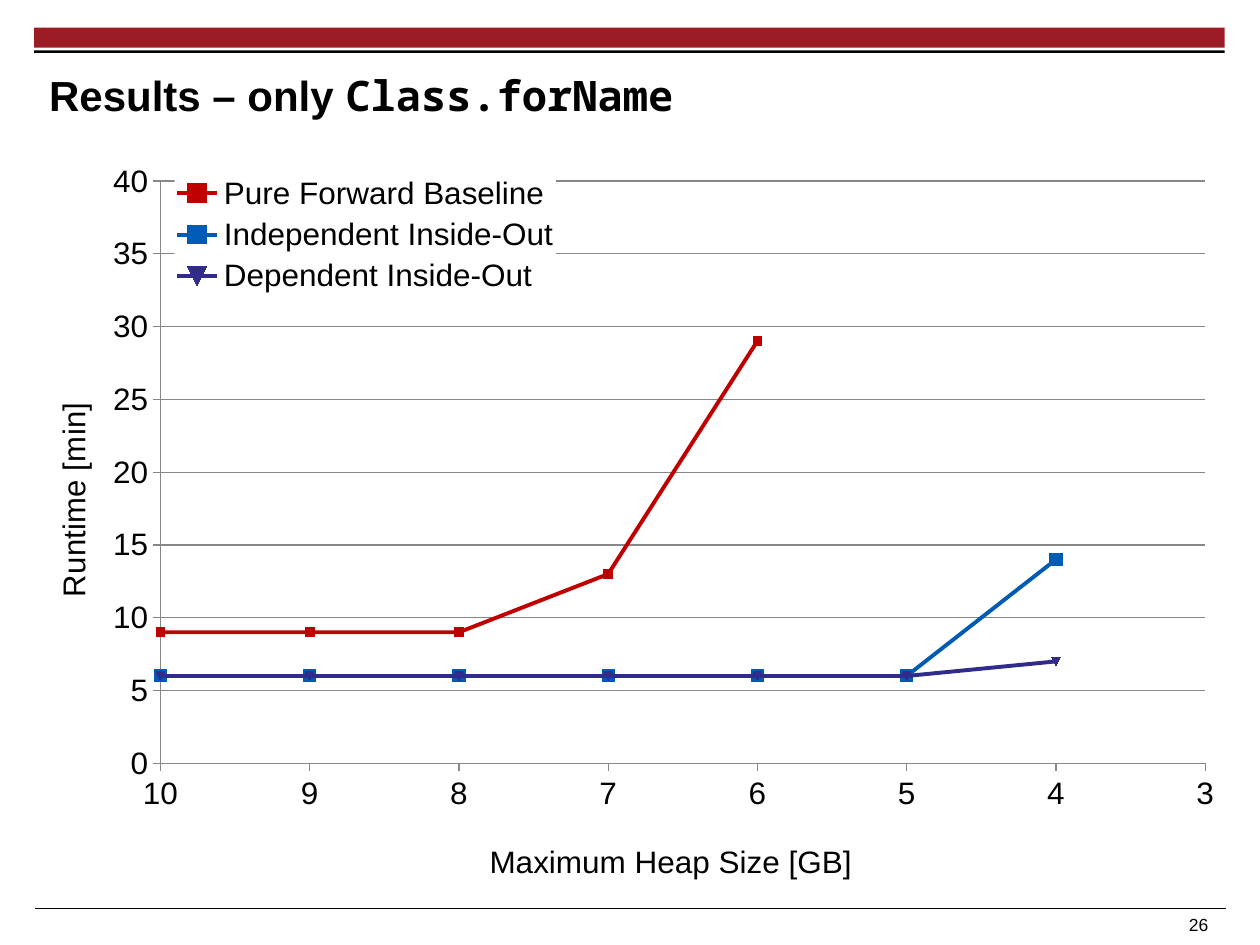
"""Build a results slide with a runtime-by-heap-size line chart."""
from dataclasses import dataclass

from lxml.etree import SubElement
from pptx import Presentation
from pptx.chart.data import CategoryChartData
from pptx.dml.color import RGBColor
from pptx.enum.chart import XL_CHART_TYPE as ChartType
from pptx.enum.chart import XL_LEGEND_POSITION as LegendPosition
from pptx.enum.chart import XL_MARKER_STYLE as Marker
from pptx.enum.chart import XL_TICK_MARK as TickMark
from pptx.enum.shapes import MSO_CONNECTOR as Connector
from pptx.enum.shapes import MSO_SHAPE as Shape
from pptx.enum.text import MSO_ANCHOR as Anchor
from pptx.enum.text import PP_ALIGN as Align
from pptx.oxml.ns import qn
from pptx.oxml.xmlchemy import OxmlElement
from pptx.util import Inches, Pt


@dataclass(frozen=True)
class Theme:
    font: str = "Arial"
    mono: str = "Noto Sans Mono"
    title_size: int = 24
    chart_size: int = 18
    number_size: int = 10
    series_width: float = 2.25
    rule_width: float = 0.6
    ink: str = "000000"
    paper: str = "FFFFFF"
    band: str = "9C1C26"
    grid: str = "878787"


THEME = Theme()
WIDTH, HEIGHT = Inches(10), Inches(7.5)

TITLE = [("Results – only ", THEME.font), ("Class.forName", THEME.mono)]
PAGE_NUMBER = "26"
HEAP_SIZES = ["10", "9", "8", "7", "6", "5", "4", "3"]
AXIS_TITLES = {"category": "Maximum Heap Size [GB]", "value": "Runtime [min]"}
SERIES = [
    ("Pure Forward Baseline", [9, 9, 9, 13, 29, None, None, None], "C00000", Marker.SQUARE, 5),
    ("Independent Inside-Out", [6, 6, 6, 6, 6, 6, 14, None], "005BB4", Marker.SQUARE, 7),
    ("Dependent Inside-Out", [6, 6, 6, 6, 6, 6, 7, None], "312C8C", Marker.AUTOMATIC, 5),
]

BARS = [((2.7, 2.93, 94.5, 2.13), THEME.band), ((2.7, 5.33, 94.5, 0.27), THEME.ink)]
FOOTER_RULE = (2.8, 96.13, 94.5, 0)
NUMBER_BOX = (18.5, 96.13, 78.8, 3.33)
TITLE_BOX = (3.9, 5.87, 93.3, 8.4)
CHART_BOX = (2.8, 16.4, 93.7, 77.73)
PLOT_SHARE = {"x": 0.106, "y": 0.036, "w": 0.885, "h": 0.804}
LEGEND_SHARE = {"x": 0.118, "y": 0.02, "w": 0.323, "h": 0.18}
CATEGORY_TITLE_SHARE = {"x": 0.38, "y": 0.94}
VALUE_TITLE_SHARE = {"x": 0.01, "y": 0.338}


def place(box):
    """Turn percentages of the slide into lengths."""
    return [int(share * side / 100) for share, side in zip(box, (WIDTH, HEIGHT) * 2)]


def color(value):
    return RGBColor.from_string(value)


def set_font(font, size, name=THEME.font, bold=False):
    font.name, font.size, font.bold = name, Pt(size), bold
    font.color.rgb = color(THEME.ink)


def set_line(line, value, width):
    line.color.rgb = color(value)
    line.width = Pt(width)


def add_bar(slide, box, fill):
    bar = slide.shapes.add_shape(Shape.RECTANGLE, *place(box))
    bar.shadow.inherit = False
    bar.fill.solid()
    bar.fill.fore_color.rgb = color(fill)
    bar.line.fill.background()


def add_rule(slide, box):
    left, top, width, height = place(box)
    rule = slide.shapes.add_connector(Connector.STRAIGHT, left, top, left + width, top + height)
    set_line(rule.line, THEME.ink, THEME.rule_width)
    SubElement(rule._element.spPr, qn("a:effectLst"))


def add_text(slide, box, runs, size, bold=False, align=Align.LEFT, right=0):
    frame = slide.shapes.add_textbox(*place(box)).text_frame
    frame.word_wrap = True
    frame.vertical_anchor = Anchor.MIDDLE
    frame.margin_left = frame.margin_top = frame.margin_bottom = 0
    frame.margin_right = Inches(right)
    paragraph = frame.paragraphs[0]
    paragraph.alignment = align
    set_font(paragraph.font, size, bold=bold)
    for text, name in runs:
        run = paragraph.add_run()
        run.text = text
        run.font.name = name


def set_layout(parent, shares, inner=False):
    layout = parent.find(qn("c:layout"))
    if layout is None:
        layout = OxmlElement("c:layout")
        overlay = parent.find(qn("c:overlay"))
        parent.insert(0 if overlay is None else parent.index(overlay), layout)
    manual = SubElement(layout, qn("c:manualLayout"))
    entries = [("layoutTarget", "inner")] if inner else []
    entries += [("xMode", "edge"), ("yMode", "edge"), *shares.items()]
    for tag, value in entries:
        SubElement(manual, qn(f"c:{tag}")).set("val", str(value))


def style_axis(axis, title, shares):
    axis.major_tick_mark = TickMark.OUTSIDE
    axis.minor_tick_mark = TickMark.NONE
    set_line(axis.format.line, THEME.grid, 0.75)
    set_font(axis.tick_labels.font, THEME.chart_size)
    frame = axis.axis_title.text_frame
    frame.text = title
    set_font(frame.paragraphs[0].font, THEME.chart_size)
    set_layout(axis.axis_title._element, shares)


def cross_at_ticks(axis):
    between = axis._element.find(qn("c:crossBetween"))
    if between is None:
        between = OxmlElement("c:crossBetween")
        axis._element.find(qn("c:crosses")).addnext(between)
    between.set("val", "midCat")


def style_series(series, value, marker, size):
    series.smooth = False
    set_line(series.format.line, value, THEME.series_width)
    series.marker.style = marker
    series.marker.size = size
    series.marker.format.fill.solid()
    series.marker.format.fill.fore_color.rgb = color(value)
    set_line(series.marker.format.line, value, 0.75)


def add_legend(chart):
    chart.has_legend = True
    legend = chart.legend
    legend.position = LegendPosition.RIGHT
    legend.include_in_layout = True
    set_font(legend.font, THEME.chart_size)
    set_layout(legend._element, LEGEND_SHARE)
    properties = OxmlElement("c:spPr")
    fill = SubElement(properties, qn("a:solidFill"))
    SubElement(fill, qn("a:srgbClr")).set("val", THEME.paper)
    legend._element.find(qn("c:overlay")).addnext(properties)


def add_runtime_chart(slide):
    data = CategoryChartData()
    data.categories = HEAP_SIZES
    for name, values, *_ in SERIES:
        data.add_series(name, values)
    chart = slide.shapes.add_chart(ChartType.LINE_MARKERS, *place(CHART_BOX), data).chart
    chart.has_title = False
    set_font(chart.font, THEME.chart_size)
    chart.plots[0].vary_by_categories = False
    set_layout(chart._chartSpace.chart.plotArea, PLOT_SHARE, inner=True)
    style_axis(chart.category_axis, AXIS_TITLES["category"], CATEGORY_TITLE_SHARE)
    axis = chart.value_axis
    style_axis(axis, AXIS_TITLES["value"], VALUE_TITLE_SHARE)
    axis.minimum_scale, axis.maximum_scale, axis.major_unit = 0, 40, 5
    axis.has_major_gridlines = True
    set_line(axis.major_gridlines.format.line, THEME.grid, 0.75)
    cross_at_ticks(axis)
    for series, (_, _, *style) in zip(chart.plots[0].series, SERIES):
        style_series(series, *style)
    add_legend(chart)


def main():
    presentation = Presentation()
    presentation.slide_width, presentation.slide_height = WIDTH, HEIGHT
    slide = presentation.slides.add_slide(presentation.slide_layouts[6])
    for box, fill in BARS:
        add_bar(slide, box, fill)
    add_rule(slide, FOOTER_RULE)
    add_text(slide, NUMBER_BOX, [(PAGE_NUMBER, THEME.font)], THEME.number_size,
             align=Align.RIGHT, right=0.14)
    add_text(slide, TITLE_BOX, TITLE, THEME.title_size, bold=True)
    add_runtime_chart(slide)
    presentation.save("out.pptx")


if __name__ == "__main__":
    main()
